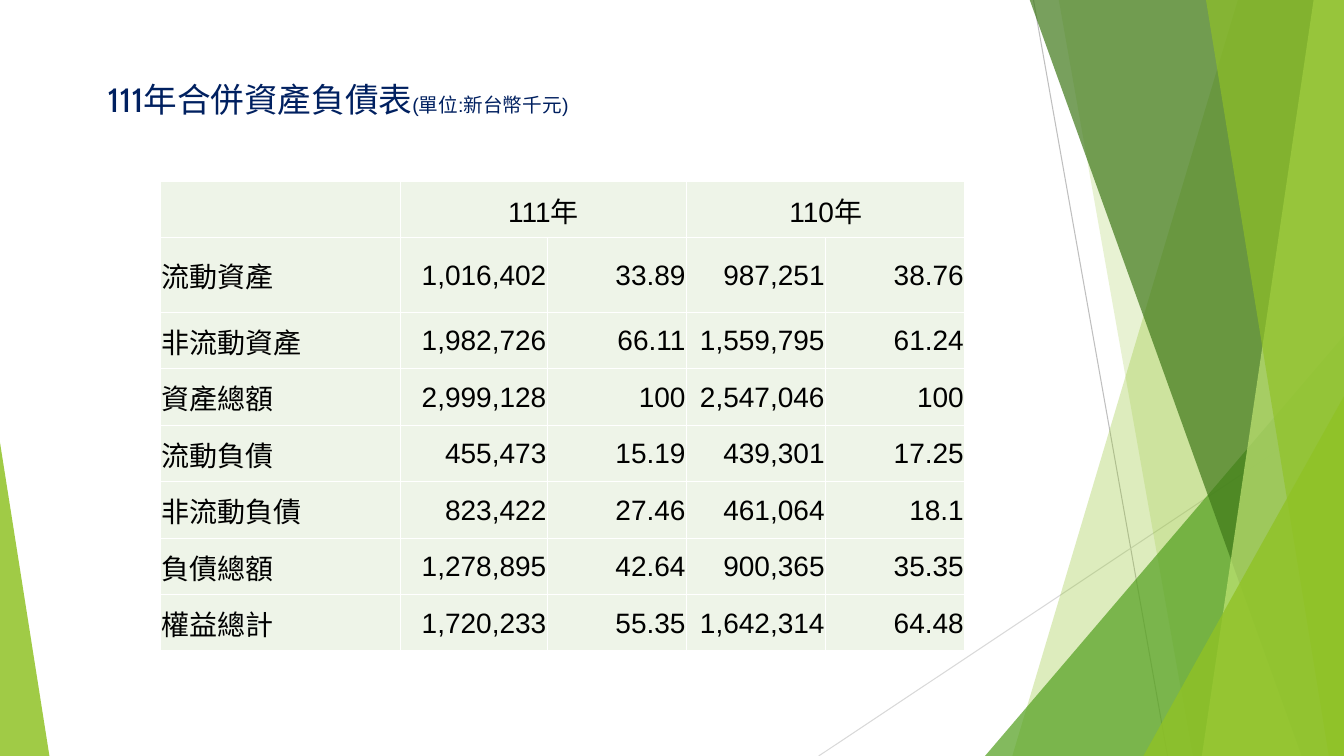
from dataclasses import dataclass
from typing import Any

from lxml import etree
from pptx import Presentation
from pptx.dml.color import RGBColor
from pptx.enum import shapes, text
from pptx.oxml import ns
from pptx.util import Inches, Pt

COLORS = {
    "lime": "90C226", "pale_lime": "C0E474", "green": "54A021", "forest": "3F7819",
    "gray": "BFBFBF", "light_gray": "D9D9D9", "navy": "002060",
    "black": "000000", "white": "FFFFFF", "cell": "EEF4E8",
}
SLIDE_W, SLIDE_H = 13.33, 7.5
BAND_TOP = -0.01


@dataclass
class Ray:
    start: tuple[float, float]
    end: tuple[float, float]
    color: str


@dataclass
class Band:
    """Sheet reaching from a slanted left edge to the right side of the slide."""
    top_x: float
    bottom_x: float
    color: str
    opacity: int


@dataclass
class Wedge:
    """Triangle standing on the bottom of the slide."""
    left: float
    top: float
    width: float
    apex: float
    color: str
    opacity: int


RAYS = [
    Ray((10.25, 0), (11.58, SLIDE_H), "gray"),
    Ray((SLIDE_W, 4.03), (8.12, SLIDE_H), "light_gray"),
]
FACETS = [
    Band(12.28, 10.04, "lime", 30),
    Band(10.5, 11.83, "lime", 20),
    Wedge(9.77, 3.33, 3.56, 1, "green", 72),
    Band(10.21, 12.91, "forest", 70),
    Band(13.03, 11.92, "pale_lime", 70),
    Band(11.96, 13.18, "lime", 65),
    Wedge(11.34, 3.93, 1.99, 1, "lime", 80),
    Wedge(0, 4.39, 0.49, 0, "lime", 85),
]

COLUMN_WIDTHS = [2.38, 1.46, 1.38, 1.38, 1.38]
ROW_HEIGHTS = [0.56, 0.74] + [0.56] * 6
BALANCE_ROWS = [
    ["", "111年", "", "110年", ""],
    ["流動資產", "1,016,402", "33.89", "987,251", "38.76"],
    ["非流動資產", "1,982,726", "66.11", "1,559,795", "61.24"],
    ["資產總額", "2,999,128", "100", "2,547,046", "100"],
    ["流動負債", "455,473", "15.19", "439,301", "17.25"],
    ["非流動負債", "823,422", "27.46", "461,064", "18.1"],
    ["負債總額", "1,278,895", "42.64", "900,365", "35.35"],
    ["權益總計", "1,720,233", "55.35", "1,642,314", "64.48"],
]
CELL_FORMAT = {
    "margin_left": Inches(0.01), "margin_right": Inches(0.01),
    "margin_top": Inches(0.01), "margin_bottom": 0,
    "vertical_anchor": text.MSO_ANCHOR.MIDDLE,
}
TITLE_FONT = {"name": "Cabin", "size": Pt(24)}
UNIT_FONT = {"name": "Arial", "size": Pt(14)}
CELL_FONT = {"name": "Arial", "size": Pt(20)}


def rgb(name: str) -> RGBColor:
    return RGBColor.from_string(COLORS[name])


def apply(target: Any, values: dict[str, Any]) -> None:
    for attribute, value in values.items():
        setattr(target, attribute, value)


def add_run(paragraph: Any, words: str, font: dict[str, Any], color: str) -> None:
    run = paragraph.add_run()
    run.text = words
    apply(run.font, font)
    run.font.color.rgb = rgb(color)


def draw_ray(slide: Any, ray: Ray) -> None:
    line = slide.shapes.add_connector(
        shapes.MSO_CONNECTOR.STRAIGHT, *map(Inches, ray.start + ray.end))
    line.line.color.rgb = rgb(ray.color)
    line.line.width = Pt(0.75)
    etree.SubElement(line._element.spPr, ns.qn("a:effectLst"))


def draw_facet(slide: Any, facet: Band | Wedge) -> None:
    if isinstance(facet, Band):
        builder = slide.shapes.build_freeform(
            Inches(facet.top_x), Inches(BAND_TOP), scale=1.0)
        corners = [(SLIDE_W, BAND_TOP), (SLIDE_W, SLIDE_H), (facet.bottom_x, SLIDE_H)]
        builder.add_line_segments([(Inches(x), Inches(y)) for x, y in corners])
        sheet = builder.convert_to_shape()
    else:
        sheet = slide.shapes.add_shape(
            shapes.MSO_SHAPE.ISOSCELES_TRIANGLE, Inches(facet.left), Inches(facet.top),
            Inches(facet.width), Inches(SLIDE_H - facet.top))
        sheet.adjustments[0] = facet.apex
    sheet.shadow.inherit = False
    sheet.line.fill.background()
    sheet.fill.solid()
    sheet.fill.fore_color.rgb = rgb(facet.color)
    tint = sheet._element.spPr.find(f"{ns.qn('a:solidFill')}/{ns.qn('a:srgbClr')}")
    etree.SubElement(tint, ns.qn("a:alpha"), val=str(facet.opacity * 1000))


def draw_title(slide: Any) -> None:
    title = slide.shapes.add_textbox(
        Inches(0.97), Inches(0.73), Inches(9.4), Inches(1.44)).text_frame
    title.word_wrap = True
    add_run(title.paragraphs[0], "111年合併資產負債表", TITLE_FONT, "navy")
    add_run(title.paragraphs[0], "(單位:新台幣千元)", UNIT_FONT, "navy")


def add_borders(cell: Any) -> None:
    properties = cell._tc.get_or_add_tcPr()
    for side in ("a:lnL", "a:lnR", "a:lnT", "a:lnB"):
        border = etree.SubElement(properties, ns.qn(side), w=str(Pt(1)))
        fill = etree.SubElement(border, ns.qn("a:solidFill"))
        etree.SubElement(fill, ns.qn("a:srgbClr"), val=COLORS["white"])


def alignment(row: int, column: int) -> Any:
    if row == 0:
        return text.PP_ALIGN.CENTER
    return text.PP_ALIGN.RIGHT if column else text.PP_ALIGN.LEFT


def draw_balance_sheet(slide: Any) -> None:
    balance = slide.shapes.add_table(
        len(ROW_HEIGHTS), len(COLUMN_WIDTHS), Inches(1.59), Inches(1.8),
        Inches(sum(COLUMN_WIDTHS)), Inches(sum(ROW_HEIGHTS))).table
    apply(balance, {"first_row": False, "horz_banding": False})
    for column, width in zip(balance.columns, COLUMN_WIDTHS):
        column.width = Inches(width)
    for row, height in zip(balance.rows, ROW_HEIGHTS):
        row.height = Inches(height)

    for r, values in enumerate(BALANCE_ROWS):
        for c, value in enumerate(values):
            cell = balance.cell(r, c)
            apply(cell, CELL_FORMAT)
            add_borders(cell)
            cell.fill.solid()
            cell.fill.fore_color.rgb = rgb("cell")
            if value:
                paragraph = cell.text_frame.paragraphs[0]
                paragraph.alignment = alignment(r, c)
                add_run(paragraph, value, CELL_FONT, "black")

    # Each year heads an amount column and a percentage column
    for c in (1, 3):
        balance.cell(0, c).merge(balance.cell(0, c + 1))


def main() -> None:
    deck = Presentation()
    apply(deck, {"slide_width": Inches(SLIDE_W), "slide_height": Inches(SLIDE_H)})
    slide = deck.slides.add_slide(deck.slide_layouts[6])

    # Background decoration
    for ray in RAYS:
        draw_ray(slide, ray)
    for facet in FACETS:
        draw_facet(slide, facet)

    # Content
    draw_title(slide)
    draw_balance_sheet(slide)
    deck.save("out.pptx")


if __name__ == "__main__":
    main()
